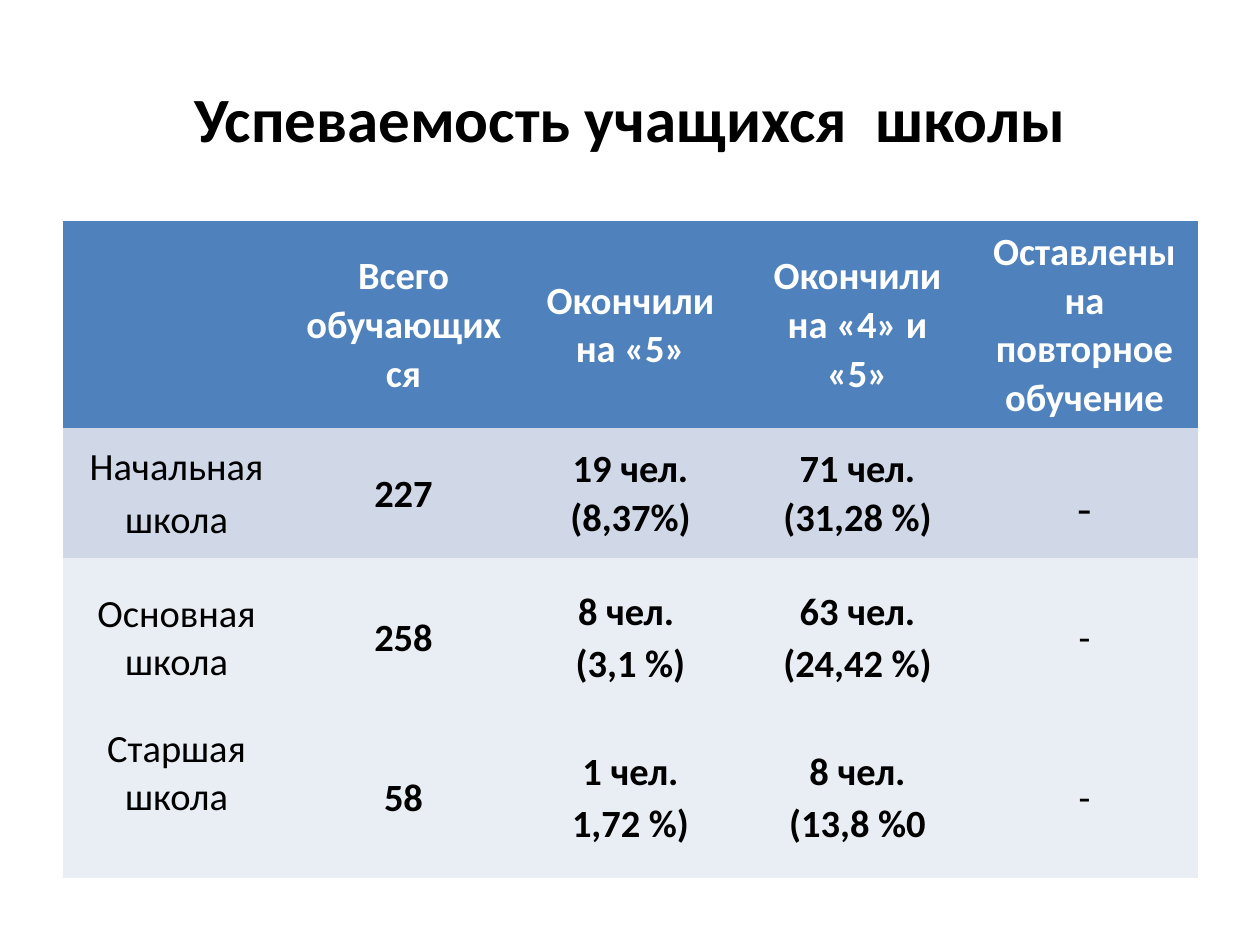
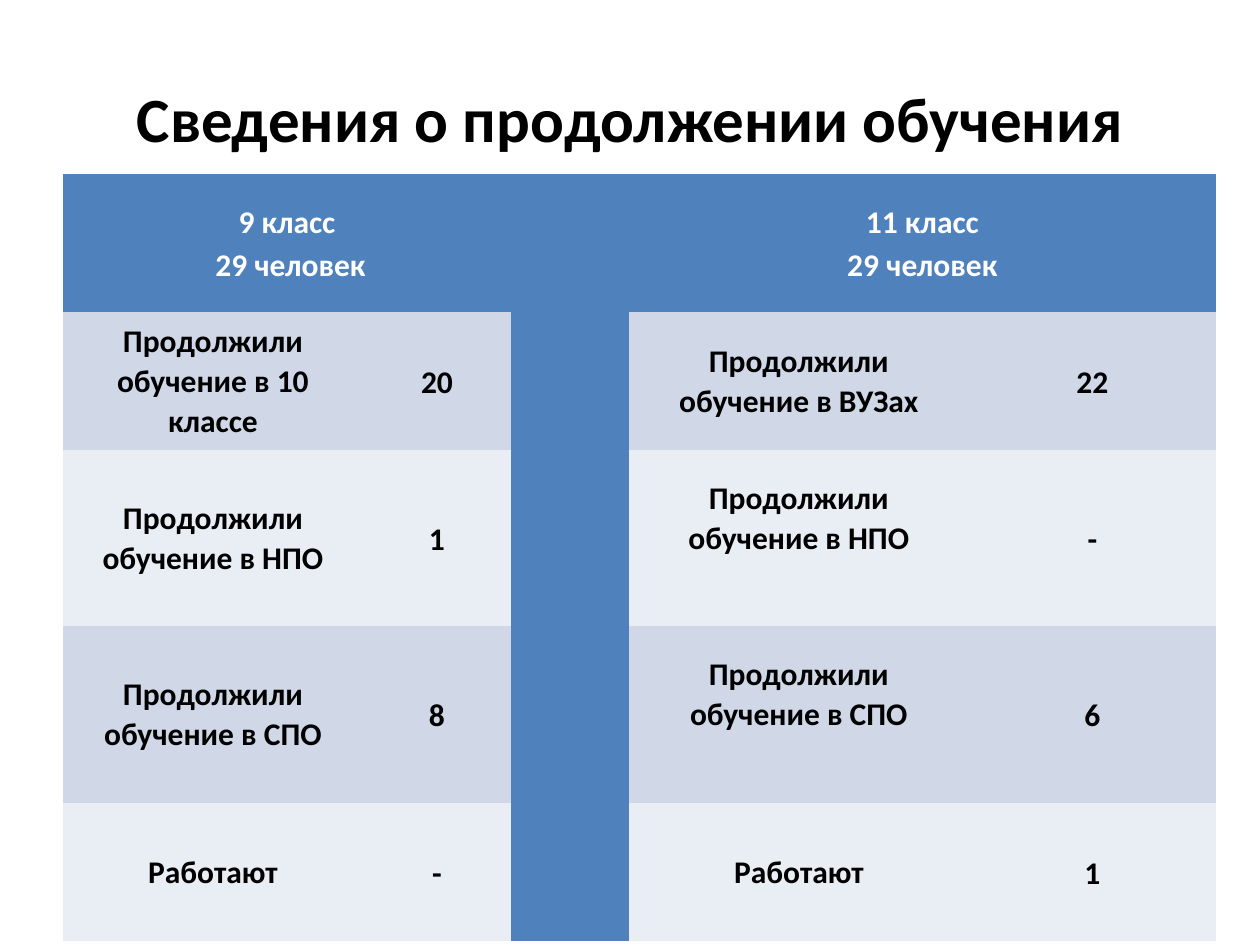
from dataclasses import dataclass
from pptx import Presentation
from pptx.dml.color import RGBColor as Rgb
from pptx.enum.text import MSO_ANCHOR as Anchor, PP_ALIGN as Align
from pptx.oxml.ns import qn
from pptx.util import Pt

SCALE = 914400 / 126


def px(n):
    return round(n * SCALE)


@dataclass(frozen=True)
class Theme:
    font: str = "Calibri"
    serif: str = "Times New Roman"
    ink: str = "000000"
    white: str = "FFFFFF"
    head: str = "4F81BD"
    dark: str = "D0D8E8"
    light: str = "E9EDF4"
    title: int = 36
    large: int = 22
    small: int = 18
    dash: int = 24
    first: float = 1.04
    later: float = 1.12
    tight: float = 1.02
    bare: str = "{2D5ABB26-0587-4C30-8999-92F81FD0307C}"


class Deck:
    def __init__(self, theme):
        self.theme = theme
        self.prs = Presentation()
        self.prs.slide_width, self.prs.slide_height = px(1260), px(945)
        self.slide = None

    def page(self, text, top, height):
        self.slide = self.prs.slides.add_slide(self.prs.slide_layouts[5])
        title = self.slide.shapes.title
        title.left, title.top = px(63), px(top)
        title.width, title.height = px(1134), px(height)
        frame = title.text_frame
        frame.text = text
        frame.word_wrap = True
        frame.vertical_anchor = Anchor.MIDDLE
        self.style(frame, self.theme.title, self.theme.ink)

    def style(self, frame, size, color, bold=True, font=None):
        for para in frame.paragraphs:
            para.alignment = Align.CENTER
            for run in para.runs:
                run.font.size = Pt(size)
                run.font.name = font or self.theme.font
                run.font.bold = bold
                run.font.color.rgb = Rgb.from_string(color)

    def cell(self, cell, text, size, color, fill, bold):
        cell.fill.solid()
        cell.fill.fore_color.rgb = Rgb.from_string(fill)
        cell.vertical_anchor = Anchor.MIDDLE
        cell.margin_left = cell.margin_right = px(13)
        cell.margin_top = cell.margin_bottom = px(6)
        cell.text_frame.text = text
        self.style(cell.text_frame, size, color, bold)
        for i, para in enumerate(cell.text_frame.paragraphs):
            para.line_spacing = self.theme.later if i else self.theme.first

    def grid(self, top, cols, rows, data, fills, size, plain=()):
        frame = self.slide.shapes.add_table(
            len(rows), len(cols), px(63), px(top), px(sum(cols)), px(sum(rows)))
        table = frame.table
        table.first_row = table.horz_banding = False
        for mark in frame.element.iter(qn("a:tableStyleId")):
            mark.text = self.theme.bare
        for col, width in zip(table.columns, cols):
            col.width = px(width)
        for row, height in zip(table.rows, rows):
            row.height = px(height)
        for r, line in enumerate(data):
            color = self.theme.ink if r else self.theme.white
            for c, text in enumerate(line):
                bold = r == 0 or c not in plain
                self.cell(table.cell(r, c), text, size, color, fills[r], bold)
        return table


def marks(deck):
    t = deck.theme
    deck.page("Успеваемость учащихся  школы", 35, 164)
    data = [
        ["", "Всего обучающихся", "Окончили на «5»", "Окончили на «4» и «5»",
         "Оставлены на повторное обучение"],
        ["Начальная\nшкола", "227", "19 чел. (8,37%)", "71 чел. (31,28 %)", "-"],
        ["Основная школа", "258", "8 чел. \n(3,1 %)", "63 чел.\n(24,42 %)", "-"],
        ["Старшая школа", "58", "1 чел.\n1,72 %)", "8 чел.\n(13,8 %0", "-"],
    ]
    fills = [t.head, t.dark, t.light, t.light]
    table = deck.grid(221, [227] * 5, [207, 130, 159, 161], data, fills,
                      t.large, plain=(0, 4))
    dash = table.cell(1, 4)
    dash.margin_top = px(44)
    deck.style(dash.text_frame, t.dash, t.ink, False, t.serif)
    dash.text_frame.paragraphs[0].line_spacing = 0.74
    table.cell(3, 0).margin_bottom = px(56)


def paths(deck):
    t = deck.theme
    deck.page("Сведения о продолжении обучения", 38, 158)
    went = "Продолжили обучение в "
    data = [
        ["9 класс\n 29 человек", "", "", "11 класс\n29 человек", ""],
        [went + "10 классе", "20", "", went + "ВУЗах", "22"],
        [went + "НПО", "1", "", went + "НПО", "-"],
        [went + "СПО", "8", "", went + "СПО", "6"],
        ["Работают", "-", "", "Работают", "1"],
    ]
    fills = [t.head] + [t.dark, t.light] * 2
    table = deck.grid(174, [300, 148, 118, 340, 247], [138, 138, 176, 177, 138],
                      data, fills, t.small)
    for start, end in (((0, 0), (0, 1)), ((0, 2), (4, 2)), ((0, 3), (0, 4))):
        table.cell(*start).merge(table.cell(*end))
    for r in range(1, 5):
        for c in (1, 4):
            count = table.cell(r, c)
            count.margin_top = px(8)
            count.text_frame.paragraphs[0].line_spacing = t.tight
    for r in (2, 3):
        table.cell(r, 3).margin_bottom = px(46)


def main():
    deck = Deck(Theme())
    marks(deck)
    paths(deck)
    deck.prs.save("out.pptx")


if __name__ == "__main__":
    main()
